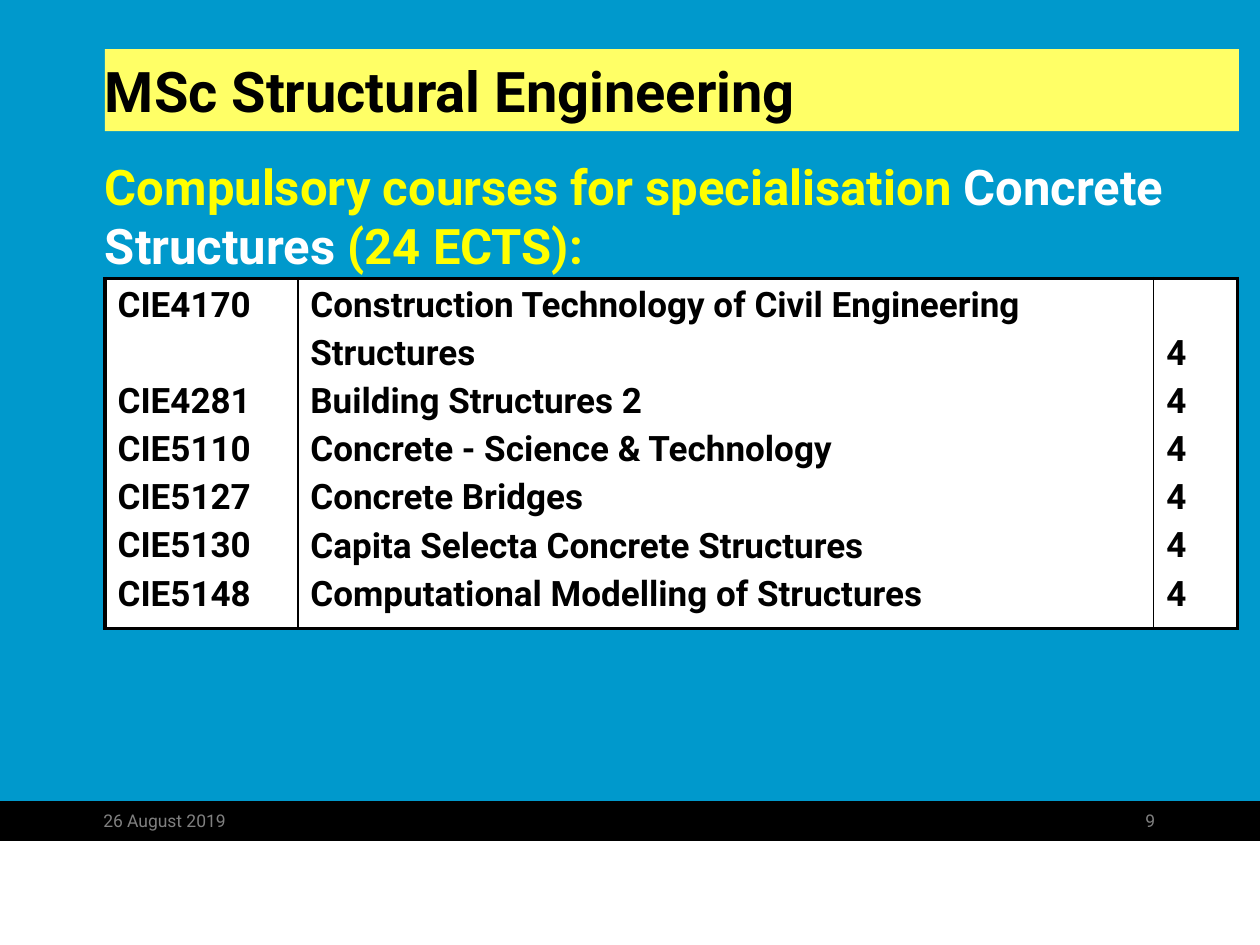
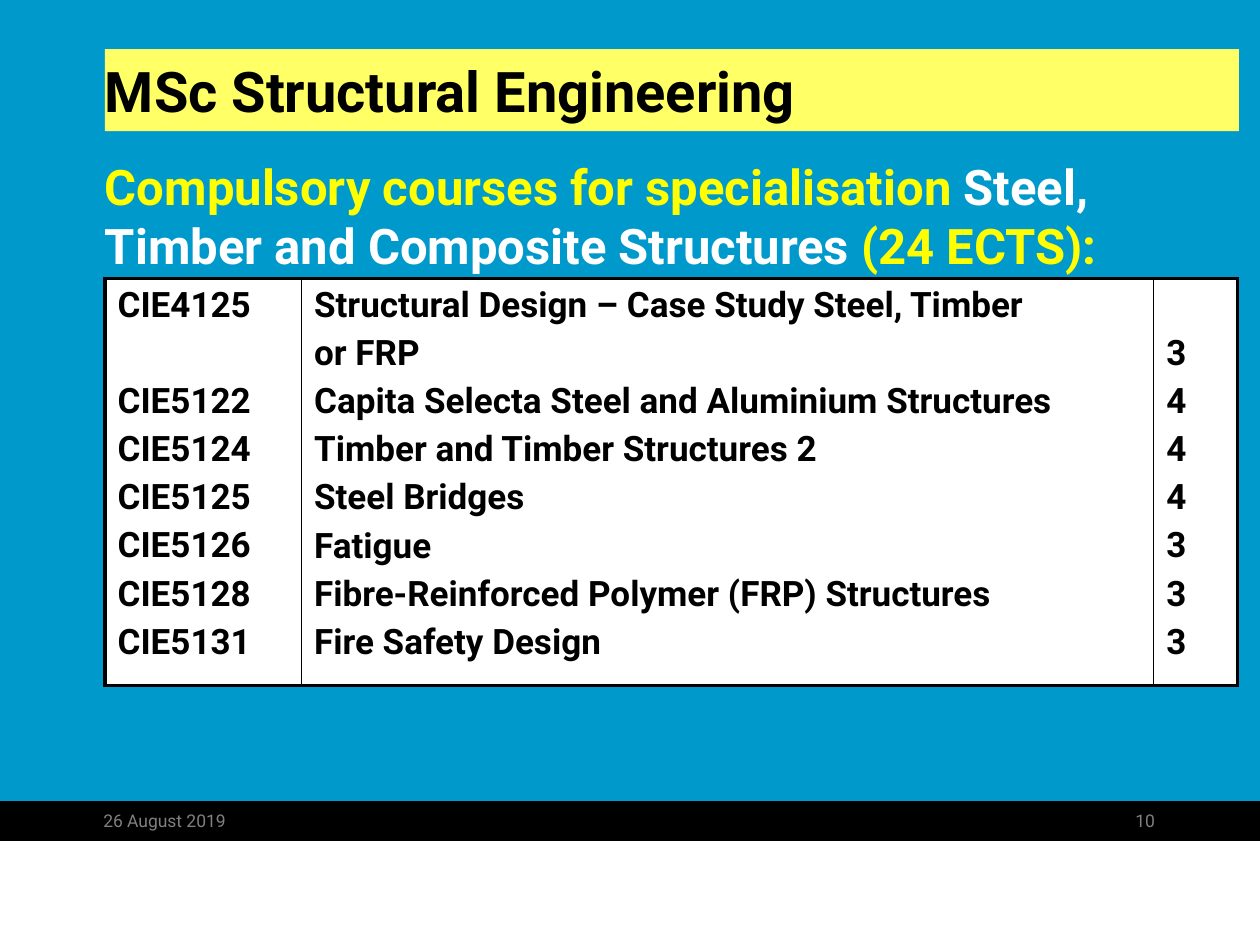
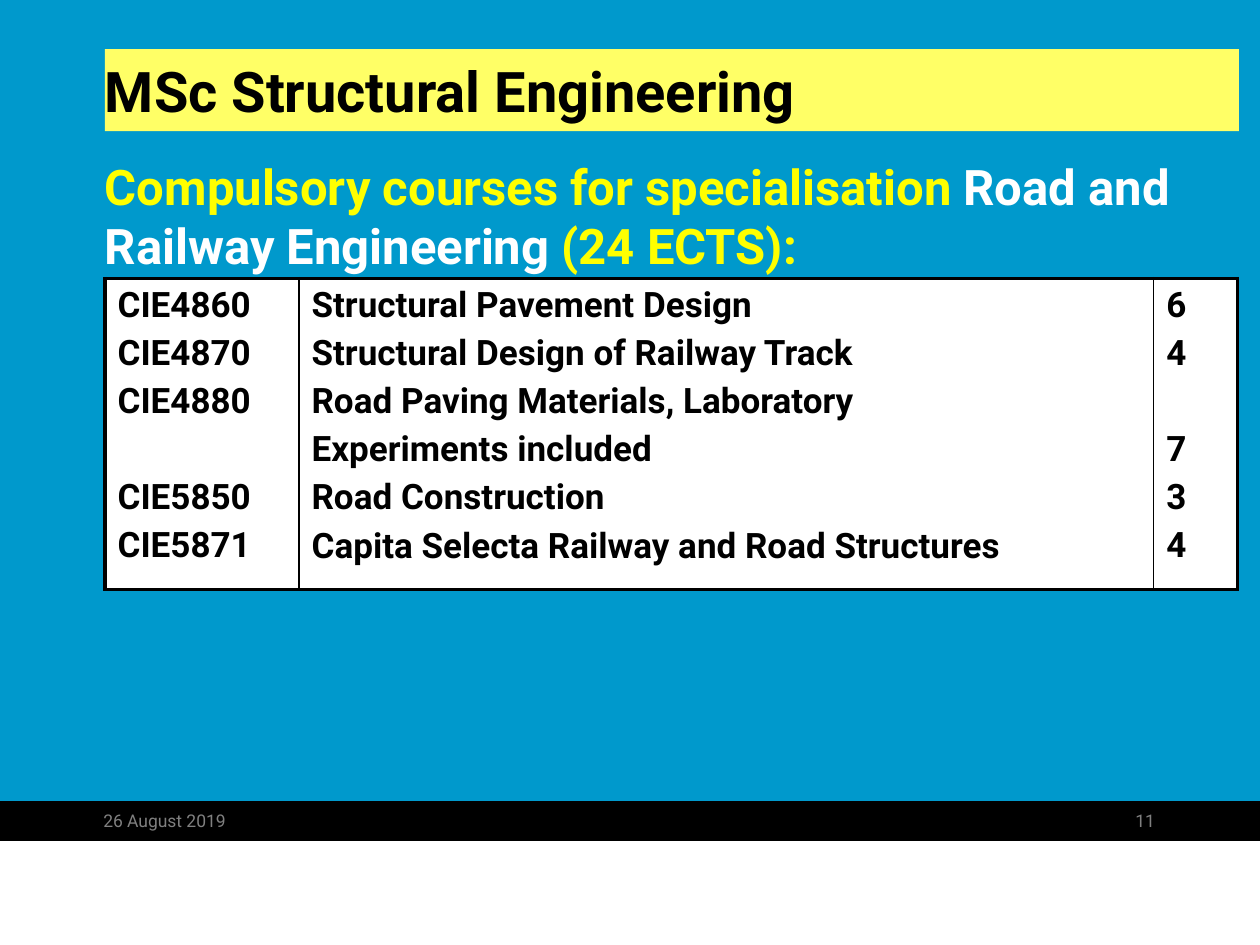
import lxml.etree
import pptx
import pptx.dml.color
import pptx.enum.shapes
import pptx.enum.text
import pptx.oxml.ns
import pptx.util

COLORS = {
    "background": "0099CC",
    "title_band": "FFFF66",
    "accent": "FFFF00",
    "white": "FFFFFF",
    "black": "000000",
    "footer_text": "808080",
}
COLUMNS, ROWS = 120, 90
LEFT = 10
TABLE_WIDTH, CREDITS_WIDTH = 107.88, 8
FIRST_PAGE = 9
OUTER_LINE, INNER_LINE = 2.25, 1
PARAGRAPH_GAP = 4  # points between table lines
LINE_PITCH = 27.44  # points from one table line to the next
CELL_MARGIN = 3.6  # points above the first table line

# Each course: code, lines of its title, credits.
SPECIALISATIONS = [
    {
        "name": "Concrete Structures",
        "code_width": 18.36,
        "height": 33.36,
        "courses": [
            ("CIE4170", ["Construction Technology of Civil Engineering", "Structures"], 4),
            ("CIE4281", ["Building Structures 2"], 4),
            ("CIE5110", ["Concrete - Science & Technology"], 4),
            ("CIE5127", ["Concrete Bridges"], 4),
            ("CIE5130", ["Capita Selecta Concrete Structures"], 4),
            ("CIE5148", ["Computational Modelling of Structures"], 4),
        ],
    },
    {
        "name": "Steel, Timber and Composite Structures",
        "code_width": 18.72,
        "height": 38.76,
        "courses": [
            ("CIE4125", ["Structural Design – Case Study Steel, Timber", "or FRP"], 3),
            ("CIE5122", ["Capita Selecta Steel and Aluminium Structures"], 4),
            ("CIE5124", ["Timber and Timber Structures 2"], 4),
            ("CIE5125", ["Steel Bridges"], 4),
            ("CIE5126", ["Fatigue"], 3),
            ("CIE5128", ["Fibre-Reinforced Polymer (FRP) Structures"], 3),
            ("CIE5131", ["Fire Safety Design"], 3),
        ],
    },
    {
        "name": "Road and Railway Engineering",
        "code_width": 18.48,
        "height": 29.64,
        "courses": [
            ("CIE4860", ["Structural Pavement Design"], 6),
            ("CIE4870", ["Structural Design of Railway Track"], 4),
            ("CIE4880", ["Road Paving Materials, Laboratory", "Experiments included"], 7),
            ("CIE5850", ["Road Construction"], 3),
            ("CIE5871", ["Capita Selecta Railway and Road Structures"], 4),
        ],
    },
]


def rgb(name):
    return pptx.dml.color.RGBColor.from_string(COLORS[name])


def place_on_lines(courses):
    """Return the code, title and credit columns as lists of (line number, text)."""
    codes, titles, credits = [], [], []
    for code, title_lines, credit in courses:
        codes.append((len(titles), code))
        for text in title_lines:
            titles.append((len(titles), text))
        credits.append((len(titles) - 1, str(credit)))
    return codes, titles, credits


class Deck:
    """Holds the shared style and the current slide; lengths are grid columns and rows."""

    font = "Roboto"

    def __init__(self):
        self.presentation = pptx.Presentation()
        self.presentation.slide_width = pptx.util.Inches(10)
        self.presentation.slide_height = pptx.util.Inches(7.5)
        fill = self.presentation.slide_master.background.fill
        fill.solid()
        fill.fore_color.rgb = rgb("background")
        self.slide = None

    def across(self, columns):
        return round(self.presentation.slide_width * columns / COLUMNS)

    def down(self, rows):
        return round(self.presentation.slide_height * rows / ROWS)

    def box(self, left, top, width, height):
        return self.across(left), self.down(top), self.across(width), self.down(height)

    def style(self, run, size, color, bold):
        run.font.name = self.font
        run.font.size = pptx.util.Pt(size)
        run.font.bold = bold
        run.font.color.rgb = rgb(color)

    def band(self, top, height, color, left=0, width=COLUMNS, outlined=False):
        shape = self.slide.shapes.add_shape(
            pptx.enum.shapes.MSO_SHAPE.RECTANGLE, *self.box(left, top, width, height))
        shape.shadow.inherit = False
        shape.fill.solid()
        shape.fill.fore_color.rgb = rgb(color)
        if outlined:
            shape.line.color.rgb = rgb(color)
            shape.line.width = pptx.util.Pt(0.75)
        else:
            shape.line.fill.background()
        return shape

    def set_text(self, shape, parts, size, bold=False, align="LEFT", anchor="TOP"):
        """Fill a shape with one paragraph made of (text, color) parts."""
        frame = shape.text_frame
        frame.word_wrap = True
        frame.margin_left = frame.margin_right = 0
        frame.vertical_anchor = pptx.enum.text.MSO_ANCHOR[anchor]
        paragraph = frame.paragraphs[0]
        paragraph.alignment = pptx.enum.text.PP_ALIGN[align]
        for text, color in parts:
            run = paragraph.add_run()
            run.text = text
            self.style(run, size, color, bold)

    def text(self, left, top, width, height, parts, size, **options):
        shape = self.slide.shapes.add_textbox(*self.box(left, top, width, height))
        self.set_text(shape, parts, size, **options)

    def new_slide(self, page):
        layout = self.presentation.slide_layouts[6]
        self.slide = self.presentation.slides.add_slide(layout)
        self.band(80, 10, "white")
        self.band(76.32, 3.68, "black", outlined=True)
        self.text(9.84, 76.56, 25, 4, [("26 August 2019", "footer_text")], 10)
        self.text(85, 76.56, 25, 3, [(str(page), "footer_text")], 10, align="RIGHT")

    def title(self, text):
        shape = self.band(4.68, 7.8, "title_band", LEFT, 108)
        self.set_text(shape, [(text, "black")], 32, bold=True, anchor="MIDDLE")

    def heading(self, specialisation):
        parts = [
            ("Compulsory courses for specialisation ", "accent"),
            (specialisation, "white"),
            (" (24 ECTS):", "accent"),
        ]
        self.text(LEFT, 14.28, 107.28, 64.2, parts, 28, bold=True)

    def borders(self, cell, widths):
        """Draw the left, right, top and bottom edges of a cell, widths in points."""
        properties = cell._tc.get_or_add_tcPr()
        qn = pptx.oxml.ns.qn
        for index, (side, width) in enumerate(zip("LRTB", widths)):
            edge = lxml.etree.Element(qn(f"a:ln{side}"), w=str(pptx.util.Pt(width)))
            fill = lxml.etree.SubElement(edge, qn("a:solidFill"))
            lxml.etree.SubElement(fill, qn("a:srgbClr"), val=COLORS["black"])
            properties.insert(index, edge)

    def fill_cell(self, cell, entries):
        """Put (line number, text) entries in a cell, leaving skipped lines as spacing."""
        first_line = entries[0][0]
        cell.margin_top = pptx.util.Pt(CELL_MARGIN + first_line * LINE_PITCH)
        cell.text_frame.text = "\n".join(text for _, text in entries)
        previous = None
        for (line, _), paragraph in zip(entries, cell.text_frame.paragraphs):
            if previous is not None:
                skipped = line - previous - 1
                paragraph.space_before = pptx.util.Pt(PARAGRAPH_GAP + skipped * LINE_PITCH)
            previous = line
            self.style(paragraph.runs[0], 20, "black", True)

    def course_table(self, courses, code_width, height):
        title_width = TABLE_WIDTH - code_width - CREDITS_WIDTH
        table = self.slide.shapes.add_table(
            1, 3, *self.box(LEFT, 26.52, TABLE_WIDTH, height)).table
        table.first_row = table.horz_banding = False
        widths = (code_width, title_width, CREDITS_WIDTH)
        edges = (OUTER_LINE, INNER_LINE, INNER_LINE, OUTER_LINE)
        for index, entries in enumerate(place_on_lines(courses)):
            table.columns[index].width = self.across(widths[index])
            cell = table.cell(0, index)
            cell.fill.solid()
            cell.fill.fore_color.rgb = rgb("white")
            self.fill_cell(cell, entries)
            self.borders(cell, (edges[index], edges[index + 1], OUTER_LINE, OUTER_LINE))


def main():
    deck = Deck()
    for page, item in enumerate(SPECIALISATIONS, FIRST_PAGE):
        deck.new_slide(page)
        deck.title("MSc Structural Engineering")
        deck.heading(item["name"])
        deck.course_table(item["courses"], item["code_width"], item["height"])
    deck.presentation.save("out.pptx")


if __name__ == "__main__":
    main()
